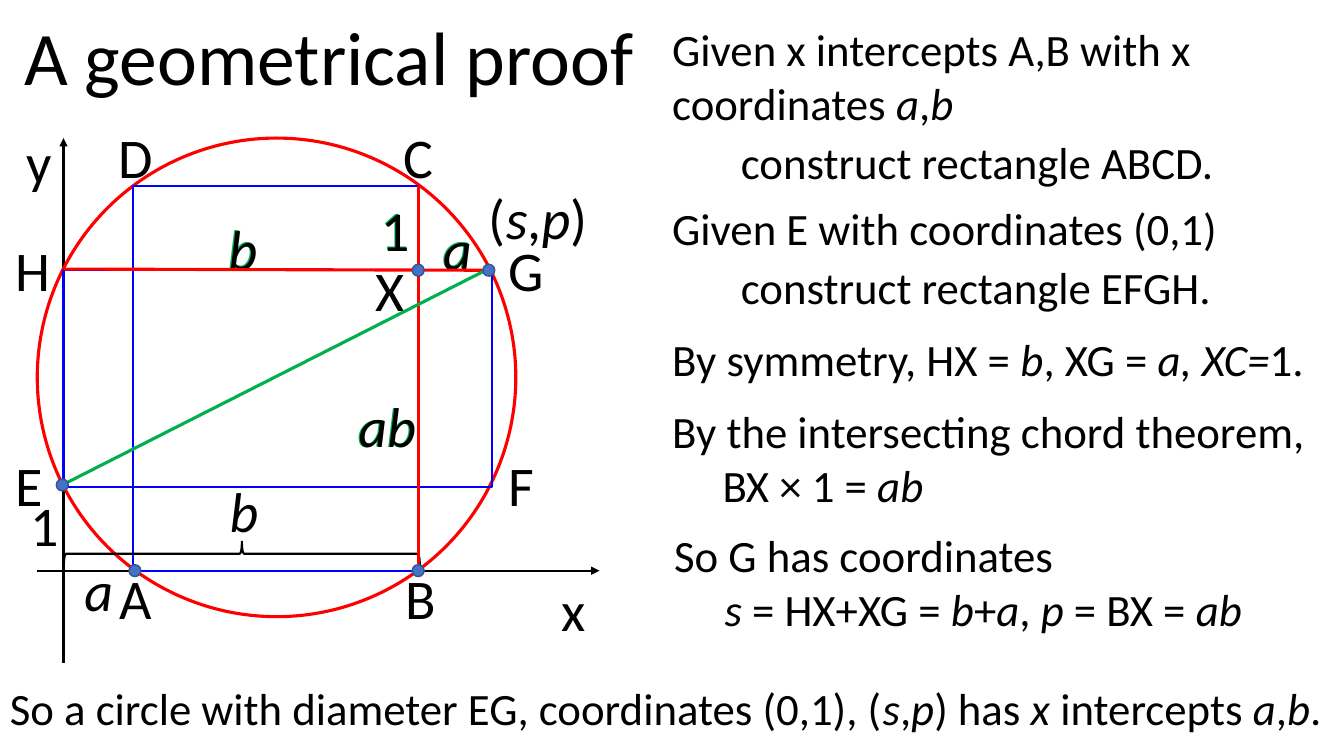
from dataclasses import dataclass

from lxml import etree
from pptx import Presentation, util as u
from pptx.dml import color
from pptx.enum import shapes, text
from pptx.oxml import ns


@dataclass(frozen=True)
class Theme:
    font: str = "Calibri"
    title: int = 54
    label: int = 40
    body: int = 32
    thin: float = 1.5
    thick: float = 2.25
    ink: str = "000000"
    red: str = "FF0000"
    blue: str = "0000FF"
    green: str = "00B050"
    dot: str = "4472C4"
    dot_edge: str = "325491"


@dataclass(frozen=True)
class Box:
    left: float
    top: float
    width: float
    height: float

    def inner(self, left, top, width, height):
        return Box(self.left + left, self.top + top, width, height)

    def lengths(self):
        return [u.Cm(value) for value in (self.left, self.top, self.width, self.height)]


THEME = Theme()


def rgb(value):
    return color.RGBColor.from_string(value)


def add_marked_text(slide, box, content, size, ink=THEME.ink):
    frame = slide.shapes.add_textbox(*box.lengths()).text_frame
    frame.word_wrap = True
    for index, line in enumerate(content.split("\n")):
        paragraph = frame.paragraphs[0] if index == 0 else frame.add_paragraph()
        paragraph.font.name = THEME.font
        paragraph.font.size = u.Pt(size)
        paragraph.font.color.rgb = rgb(ink)
        for position, piece in enumerate(line.split("*")):
            if piece:
                run = paragraph.add_run()
                run.text = piece
                if position % 2:
                    run.font.italic = True
    return frame


def add_shape(slide, kind, box, line, weight, fill=None):
    shape = slide.shapes.add_shape(kind, *box.lengths())
    shape.shadow.inherit = False
    if fill:
        shape.fill.solid()
        shape.fill.fore_color.rgb = rgb(fill)
    else:
        shape.fill.background()
    shape.line.color.rgb = rgb(line)
    shape.line.width = u.Pt(weight)
    return shape


def add_line(slide, box, start, end, ink, weight, arrow=False):
    points = [u.Cm(value) for x, y in (start, end) for value in (box.left + x, box.top + y)]
    connector = slide.shapes.add_connector(shapes.MSO_CONNECTOR.STRAIGHT, *points)
    connector.line.color.rgb = rgb(ink)
    connector.line.width = u.Pt(weight)
    properties = connector._element.spPr
    if arrow:
        etree.SubElement(properties.find(ns.qn("a:ln")), ns.qn("a:tailEnd"), type="triangle")
    etree.SubElement(properties, ns.qn("a:effectLst"))


def add_label(slide, box, content, left, top, width=1.19, ink=THEME.ink):
    add_marked_text(slide, box.inner(left, top, width, 1.96), content, THEME.label, ink)


def add_title(slide, box):
    frame = add_marked_text(slide, box, "A geometrical proof", THEME.title)
    frame.vertical_anchor = text.MSO_ANCHOR.MIDDLE
    frame.paragraphs[0].line_spacing = 0.9


def add_diagram(slide, box):
    y_axis, a_x, b_x, g_x = 0.66, 2.42, 9.6, 11.46
    c_y, g_y, e_y, x_axis = 1.2, 3.33, 8.79, 10.9
    oval = shapes.MSO_SHAPE.OVAL
    rectangle = shapes.MSO_SHAPE.RECTANGLE
    segments = (
        ("*b*", 4.57, 1.8, 1.19),
        ("*a*", 9.98, 1.8, 1.19),
        ("1", 8.43, 1.32, 1.19),
        ("*ab*", 7.85, 6.27, 2.11),
    )
    for content, left, top, width in segments:
        add_label(slide, box, content, left - 0.03, top - 0.02, width, THEME.green)

    add_line(slide, box, (0, x_axis), (14.17, x_axis), THEME.ink, THEME.thin, True)
    add_line(slide, box, (y_axis, 13.23), (y_axis, 0), THEME.ink, THEME.thin, True)
    add_shape(slide, oval, box, THEME.red, THEME.thick)
    for left, top, right, bottom in ((a_x, c_y, b_x, x_axis), (y_axis, g_y, g_x, e_y)):
        area = box.inner(left, top, right - left, bottom - top)
        add_shape(slide, rectangle, area, THEME.blue, THEME.thin)
    brace = add_shape(slide, shapes.MSO_SHAPE.LEFT_BRACE,
                      box.inner(4.85, 5.99, 0.61, 8.97), THEME.ink, THEME.thin)
    brace.rotation = 90

    for content, left, top, width in segments:
        add_label(slide, box, content, left, top, width)
    add_label(slide, box, "(*s*,*p*)", 11.13, 1.02, 3.78)
    for content, left, top in (
        ("x", 12.95, 10.9), ("y", -0.53, -0.38),
        ("*a*", 0.94, 10.39), ("*b*", 4.6, 8.41), ("1", -0.43, 8.76),
        ("A", 1.83, 10.59), ("B", 9.02, 10.59),
        ("D", 1.8, -0.51), ("C", 8.99, -0.51),
        ("H", -0.81, 2.34), ("G", 11.63, 2.34),
        ("E", -0.81, 7.75), ("F", 11.63, 7.75),
        ("X", 8.28, 2.84),
    ):
        add_label(slide, box, content, left, top)

    add_line(slide, box, (y_axis, 3.3), (11.4, g_y), THEME.red, THEME.thick)
    add_line(slide, box, (b_x, x_axis), (b_x, c_y), THEME.red, THEME.thick)
    add_line(slide, box, (0.63, 8.74), (11.3, g_y), THEME.green, THEME.thick)
    radius = 0.15
    for x, y in ((2.46, x_axis), (b_x, x_axis), (b_x, g_y), (11.38, g_y), (0.63, 8.74)):
        area = box.inner(x - radius, y - radius, 2 * radius, 2 * radius)
        add_shape(slide, oval, area, THEME.dot_edge, 1, THEME.dot)


def add_proof(slide, box):
    for content, indent, top, height in (
        ("Given x intercepts A,B with x coordinates *a*,*b*", 0, 0, 3),
        ("construct rectangle ABCD.", 1.73, 2.85, 1.62),
        ("Given E with coordinates (0,1)", 0, 4.5, 1.62),
        ("construct rectangle EFGH.", 1.73, 6, 1.62),
        ("By symmetry, HX = *b*, XG = *a, XC=*1.", 0, 7.8, 1.62),
        ("By the intersecting chord theorem,\n\tBX × 1 = *ab*", 0, 9.63, 3),
        ("So G has coordinates\n*\ts* = HX+XG = *b*+*a*, *p* = BX = *ab*", 0.05, 12.75, 3),
    ):
        area = box.inner(indent, top, box.width - indent, height)
        add_marked_text(slide, area, content, THEME.body)


def add_conclusion(slide, box):
    content = ("So a circle with diameter EG, coordinates (0,1), (*s*,*p*) "
               "has *x* intercepts *a*,*b*.")
    add_marked_text(slide, box, content, THEME.body)


def main():
    presentation = Presentation()
    presentation.slide_width = u.Cm(33.87)
    presentation.slide_height = u.Cm(19.05)
    slide = presentation.slides.add_slide(presentation.slide_layouts[6])
    add_title(slide, Box(0.36, 0.53, 16.94, 2.01))
    add_diagram(slide, Box(0.94, 3.48, 12.06, 12.06))
    add_proof(slide, Box(16.69, 0.43, 17.17, 15.75))
    add_conclusion(slide, Box(0, 17.02, 33.87, 1.62))
    presentation.save("out.pptx")


if __name__ == "__main__":
    main()
